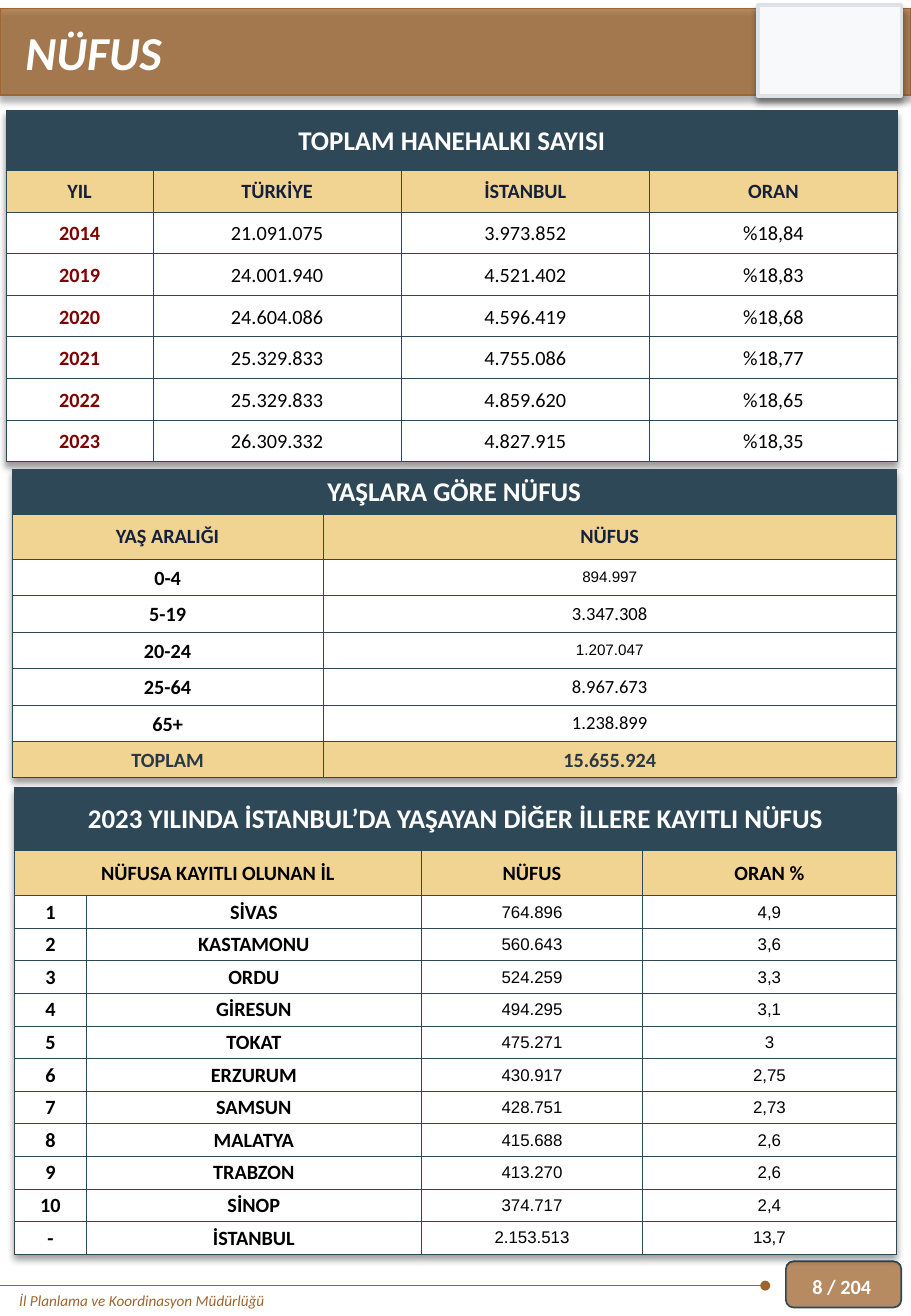
from dataclasses import dataclass

from lxml import etree
from pptx import Presentation
from pptx import util as u
from pptx.dml import color
from pptx.enum import shapes, text
from pptx.oxml import ns


@dataclass(frozen=True)
class Theme:
    font: str = "Calibri"
    number_font: str = "Arial"
    bronze: str = "9E652E"
    navy: str = "2F4858"
    sand: str = "F2D492"
    ink: str = "14213D"
    total_ink: str = "283845"
    year: str = "800000"
    black: str = "000000"
    white: str = "FFFFFF"
    panel: str = "F8F9FA"
    panel_line: str = "DEE2E6"
    title: float = 28
    heading: float = 16
    label: float = 12
    medium: float = 11
    number: float = 10
    small: float = 9


THEME = Theme()
CENTER = text.PP_ALIGN.CENTER
LEFT = text.PP_ALIGN.LEFT
MIDDLE = text.MSO_ANCHOR.MIDDLE
TOP = text.MSO_ANCHOR.TOP


def rgb(value):
    return color.RGBColor.from_string(value)


def write(frame, content, size=THEME.label, ink=THEME.black, font=THEME.font,
          bold=False, italic=False, align=LEFT, spacing=1.0):
    paragraph = frame.paragraphs[0]
    paragraph.alignment = align
    paragraph.line_spacing = spacing
    paragraph.space_before = u.Pt(0)
    run = paragraph.add_run()
    run.text = content
    run.font.name = font
    run.font.size = u.Pt(size)
    run.font.bold = bold
    run.font.italic = italic
    run.font.color.rgb = rgb(ink)


def child(parent, tag, **attributes):
    element = etree.SubElement(parent, ns.qn(tag))
    for name, value in attributes.items():
        element.set(name, str(value))
    return element


def cast_shadow(effects):
    shadow = child(effects, "a:outerShdw", blurRad=u.Pt(4), dist=u.Pt(3),
                   dir=5400000, algn="t", rotWithShape=0)
    tint = child(shadow, "a:srgbClr", val=THEME.black)
    child(tint, "a:alpha", val=40000)


def share(total, leading, count):
    rest = (total - sum(leading)) / (count - len(leading))
    return leading + [rest] * (count - len(leading))


class SlideBuilder:
    def __init__(self, presentation, theme):
        self.theme = theme
        self.slide = presentation.slides.add_slide(presentation.slide_layouts[5])

    def panel(self, kind, box, fill, line, weight=1, alpha=100, shadow=False):
        shape = self.slide.shapes.add_shape(kind, *map(u.Inches, box))
        shape.fill.solid()
        shape.fill.fore_color.rgb = rgb(fill)
        shape.line.color.rgb = rgb(line)
        shape.line.width = u.Pt(weight)
        shape.shadow.inherit = False
        properties = shape.element.spPr
        if alpha < 100:
            tint = properties.find(ns.qn("a:solidFill")).find(ns.qn("a:srgbClr"))
            child(tint, "a:alpha", val=alpha * 1000)
        if shadow:
            cast_shadow(properties.find(ns.qn("a:effectLst")))

    def rule(self, start, end, y):
        connector = self.slide.shapes.add_connector(
            shapes.MSO_CONNECTOR.STRAIGHT, *map(u.Inches, (start, y, end, y)))
        connector.line.color.rgb = rgb(self.theme.bronze)
        connector.line.width = u.Pt(0.5)
        child(connector.line._get_or_add_ln(), "a:headEnd", type="oval")
        child(connector.element.spPr, "a:effectLst")

    def label(self, box, content, anchor=TOP, **style):
        shape = self.slide.shapes.add_textbox(*map(u.Inches, box))
        shape.text_frame.word_wrap = True
        shape.text_frame.vertical_anchor = anchor
        write(shape.text_frame, content, **style)

    def title(self, box, content, **style):
        shape = self.slide.shapes.title
        shape.left, shape.top, shape.width, shape.height = map(u.Inches, box)
        shape.text_frame.word_wrap = True
        shape.text_frame.vertical_anchor = MIDDLE
        write(shape.text_frame, content, **style)
        self.slide.shapes.element.append(shape.element)

    def cell(self, cell, content, fill=THEME.white, **style):
        cell.margin_left = cell.margin_right = cell.margin_top = u.Inches(0.01)
        cell.margin_bottom = 0
        cell.vertical_anchor = MIDDLE
        properties = cell._tc.get_or_add_tcPr()
        for side in ("a:lnL", "a:lnR", "a:lnT", "a:lnB"):
            border = child(properties, side, w=u.Pt(0.25))
            child(child(border, "a:solidFill"), "a:srgbClr", val=self.theme.navy)
        cell.fill.solid()
        cell.fill.fore_color.rgb = rgb(fill)
        write(cell.text_frame, content, align=CENTER, **style)

    def table(self, box, heading, header, rows, styles, header_ink, columns, heights):
        width = len(header)
        banner = dict(fill=self.theme.navy, ink=self.theme.white,
                      size=self.theme.heading, bold=True)
        caption = dict(fill=self.theme.sand, ink=header_ink, bold=True)
        grid = [[(heading if not i else "", banner) for i in range(width)],
                [(name, caption) for name in header]]
        grid += [[value if isinstance(value, tuple) else (value, style)
                  for value, style in zip(row, styles)] for row in rows]
        frame = self.slide.shapes.add_table(len(grid), width, *map(u.Inches, box))
        table = frame.table
        table.first_row = table.horz_banding = False
        effects = etree.Element(ns.qn("a:effectLst"))
        cast_shadow(effects)
        table._tbl.tblPr.insert(0, effects)
        for column, size in zip(table.columns, share(box[2], columns, width)):
            column.width = u.Inches(size)
        for row, size in zip(table.rows, share(box[3], heights, len(grid))):
            row.height = u.Inches(size)
        for i, row in enumerate(grid):
            for j, (content, style) in enumerate(row):
                self.cell(table.cell(i, j), content, **style)
        table.cell(0, 0).merge(table.cell(0, width - 1))
        if "" in header:
            merged = header.index("")
            table.cell(1, merged - 1).merge(table.cell(1, merged))


def main():
    presentation = Presentation()
    presentation.slide_width = u.Inches(7.5)
    presentation.slide_height = u.Inches(10.83)
    theme = THEME
    page = SlideBuilder(presentation, theme)
    rectangle = shapes.MSO_SHAPE.RECTANGLE

    page.panel(shapes.MSO_SHAPE.ROUNDED_RECTANGLE, (6.47, 10.38, 0.95, 0.38),
               theme.bronze, theme.navy, alpha=75)
    page.panel(rectangle, (0, 0.07, 7.5, 0.71), theme.bronze, theme.bronze,
               alpha=75, shadow=True)
    page.panel(rectangle, (6.24, 0.04, 1.18, 0.75), theme.panel, theme.panel_line,
               weight=2, shadow=True)
    page.rule(6.3, 0, 10.58)
    page.label((0.06, 10.58, 4.69, 0.25), "İl Planlama ve Koordinasyon Müdürlüğü",
               size=theme.small, ink=theme.bronze, italic=True)

    plain = dict(spacing=1.07)
    strong = dict(bold=True)
    year = dict(bold=True, ink=theme.year, spacing=1.07)
    number = dict(font=theme.number_font, size=theme.number)
    small = dict(font=theme.number_font, size=theme.small)
    total = dict(fill=theme.sand, ink=theme.total_ink, bold=True, spacing=1.07)

    households = [("2014", "21.091.075", "3.973.852", "%18,84"),
                  ("2019", "24.001.940", "4.521.402", "%18,83"),
                  ("2020", "24.604.086", "4.596.419", "%18,68"),
                  ("2021", "25.329.833", "4.755.086", "%18,77"),
                  ("2022", "25.329.833", "4.859.620", "%18,65"),
                  ("2023", "26.309.332", "4.827.915", "%18,35")]
    page.table((0.05, 0.91, 7.34, 2.89), "TOPLAM HANEHALKI SAYISI",
               ["YIL", "TÜRKİYE", "İSTANBUL", "ORAN"], households,
               [year, plain, plain, plain], theme.ink, [1.21], [0.49])

    ages = [("0-4", ("894.997", small)), ("5-19", "3.347.308"),
            ("20-24", ("1.207.047", small)), ("25-64", "8.967.673"),
            ("65+", "1.238.899"), (("TOPLAM", total), ("15.655.924", total))]
    page.table((0.1, 3.86, 7.28, 2.54), "YAŞLARA GÖRE NÜFUS",
               ["YAŞ ARALIĞI", "NÜFUS"], ages,
               [dict(bold=True, spacing=1.07), dict(size=theme.medium)],
               theme.ink, [2.56], [0.37, 0.37])

    provinces = [("1", "SİVAS", "764.896", "4,9"), ("2", "KASTAMONU", "560.643", "3,6"),
                 ("3", "ORDU", "524.259", "3,3"), ("4", "GİRESUN", "494.295", "3,1"),
                 ("5", "TOKAT", "475.271", "3"), ("6", "ERZURUM", "430.917", "2,75"),
                 ("7", "SAMSUN", "428.751", "2,73"), ("8", "MALATYA", "415.688", "2,6"),
                 ("9", "TRABZON", "413.270", "2,6"), ("10", "SİNOP", "374.717", "2,4"),
                 ("-", "İSTANBUL", "2.153.513", "13,7")]
    page.table((0.12, 6.48, 7.26, 3.84),
               "2023 YILINDA İSTANBUL’DA YAŞAYAN DİĞER İLLERE KAYITLI NÜFUS",
               ["NÜFUSA KAYITLI OLUNAN İL", "", "NÜFUS", "ORAN %"], provinces,
               [strong, strong, number, number], theme.black,
               [0.59, 2.76, 1.82], [0.52, 0.37])

    page.title((0.11, 0.14, 7.17, 0.57), "NÜFUS", size=theme.title,
               ink=theme.white, bold=True, italic=True)
    page.label((6.59, 10.38, 1.15, 0.42), "8 / 204", anchor=MIDDLE,
               ink=theme.white, bold=True)
    presentation.save("out.pptx")


if __name__ == "__main__":
    main()
